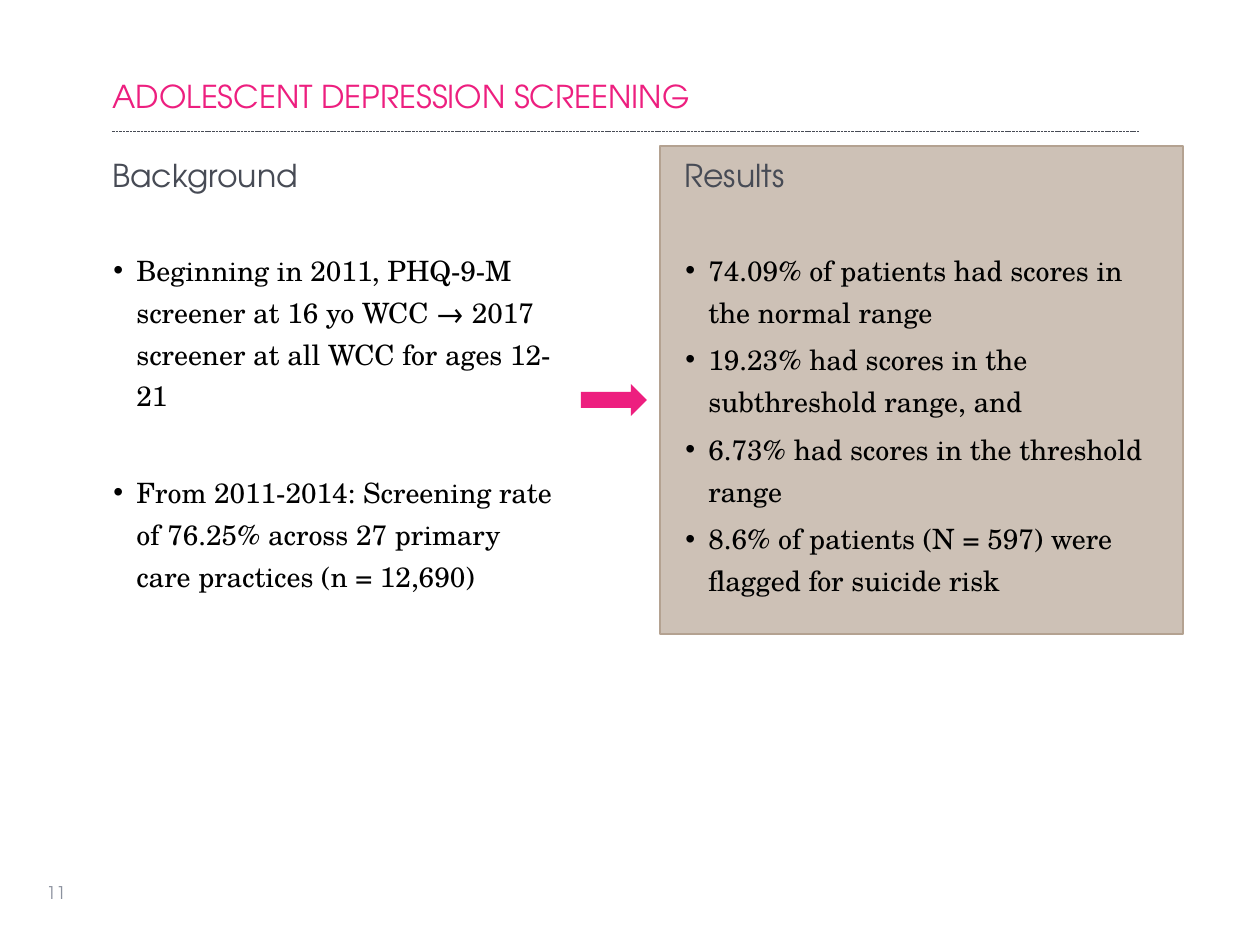
from lxml.etree import SubElement as Sub
from pptx import Presentation
from pptx.dml.color import RGBColor as RGB
from pptx.enum.dml import MSO_LINE as Dash
from pptx.enum.shapes import MSO_CONNECTOR as Conn, MSO_SHAPE as Shape
from pptx.oxml.ns import qn
from pptx.util import Pt

PX = 914400 / 126
PINK, SLATE, GRAY = RGB(0xED, 0x1F, 0x7F), RGB(0x47, 0x4B, 0x55), RGB(0x8B, 0x91, 0x9E)
SAND, TAN, BLACK = RGB(0xCD, 0xC1, 0xB6), RGB(0xB4, 0xA2, 0x91), RGB(0, 0, 0)
HEAD, BODY = "TeX Gyre Adventor", "TeX Gyre Schola"

# Content
TITLE, PAGE = "ADOLESCENT DEPRESSION SCREENING", "11"
# left, width, heading, gap between bullets in points, bullets
COLS = [
    (100, 469, "Background", 31, [
        "Beginning in 2011, PHQ-9-M screener at 16 yo WCC → 2017 screener at all WCC for ages 12-21",
        "From 2011-2014: Screening rate of 76.25% across 27 primary care practices (n = 12,690)",
    ]),
    (672, 499, "Results", 3.2, [
        "74.09% of patients had scores in the normal range",
        "19.23% had scores in the subthreshold range, and",
        "6.73% had scores in the threshold range",
        "8.6% of patients (N = 597) were flagged for suicide risk",
    ]),
]
HEAD_GAP = 29


def px(*nums):
    return [round(n * PX) for n in nums]


def style(para, text, size, face, color):
    para.text = text
    font = para.font
    font.size, font.name, font.color.rgb = Pt(size), face, color


def add_text(box, text, size, color):
    frame = slide.shapes.add_textbox(*px(*box)).text_frame
    frame.word_wrap = True
    style(frame.paragraphs[0], text, size, HEAD, color)
    return frame


def add_bullet(frame, text, gap):
    para = frame.add_paragraph()
    props = para._p.get_or_add_pPr()
    left, hang = px(24, -23)
    props.set("marL", str(left))
    props.set("indent", str(hang))
    Sub(props, qn("a:buFont"), typeface="Arial")
    Sub(props, qn("a:buChar"), char="•")
    para.line_spacing, para.space_before = 1.25, Pt(gap)
    style(para, text, 16, BODY, BLACK)


def add_block(kind, box, fill, edge=None):
    block = slide.shapes.add_shape(kind, *px(*box))
    block.shadow.inherit = False
    block.fill.solid()
    block.fill.fore_color.rgb = fill
    if edge:
        block.line.color.rgb, block.line.width = edge, Pt(0.75)
    else:
        block.line.fill.background()


deck = Presentation()
deck.slide_width, deck.slide_height = px(1260, 945)
slide = deck.slides.add_slide(deck.slide_layouts[6])

# Rule under the title
rule = slide.shapes.add_connector(Conn.STRAIGHT, *px(112, 131, 1139, 131))
rule.line.color.rgb, rule.line.width = SLATE, Pt(0.5)
rule.line.dash_style = Dash.SQUARE_DOT
Sub(rule._element.spPr, qn("a:effectLst"))

# Results panel, title and page number
add_block(Shape.RECTANGLE, (660, 146, 523, 488), SAND, TAN)
add_text((100, 71, 1040, 69), TITLE, 18, PINK)
add_text((34, 876, 294, 50), PAGE, 10, GRAY)

# Columns
for left, width, head, gap, items in COLS:
    frame = add_text((left, 150, width, 556), head, 18, SLATE)
    for i, item in enumerate(items):
        add_bullet(frame, item, gap if i else HEAD_GAP)

# Arrow from background to results
add_block(Shape.RIGHT_ARROW, (581, 384, 66, 32), PINK)

deck.save("out.pptx")
